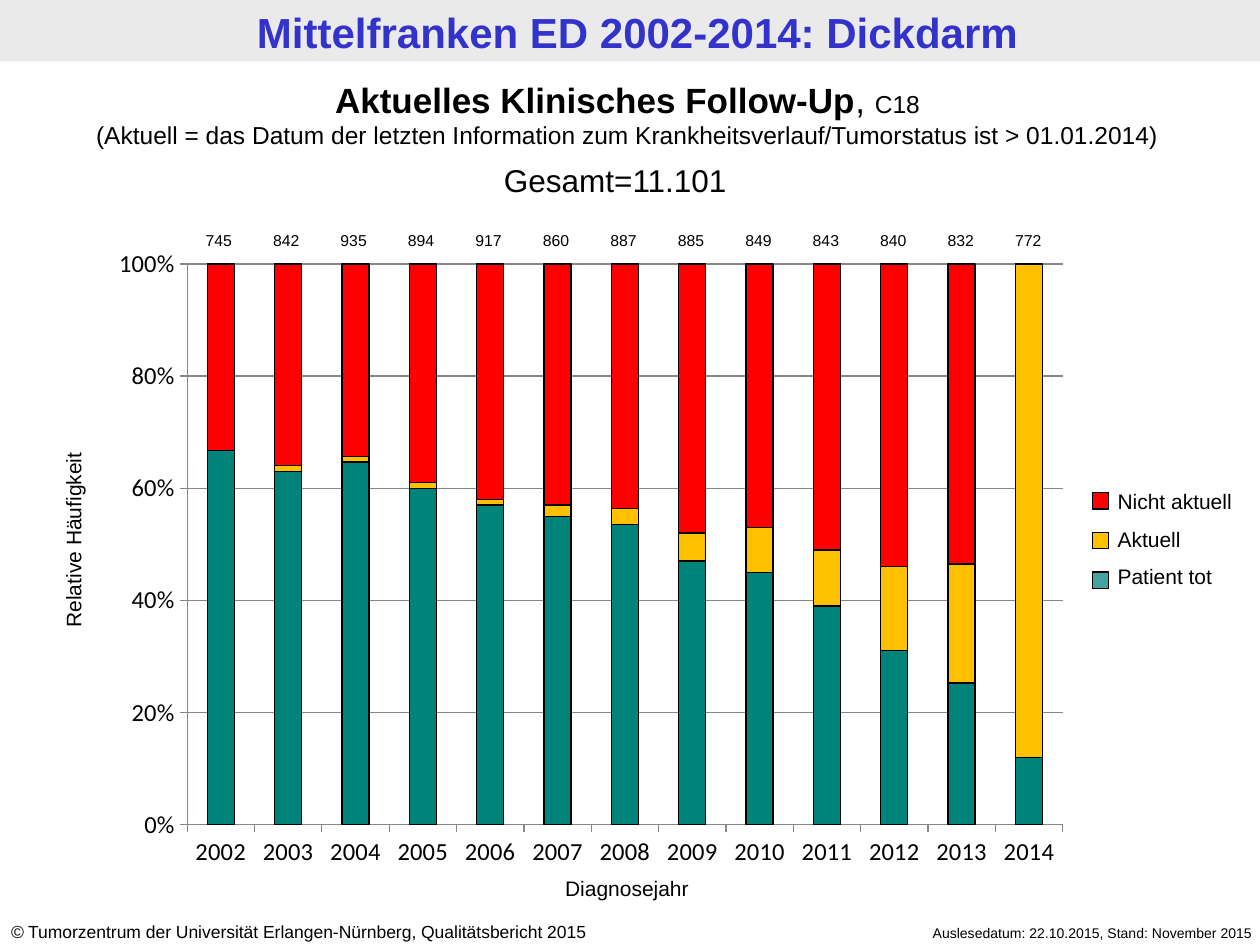
from lxml import etree
from pptx import Presentation
from pptx.chart.data import CategoryChartData
from pptx.dml.color import RGBColor
from pptx.enum.chart import XL_CHART_TYPE, XL_TICK_MARK
from pptx.enum.shapes import MSO_SHAPE
from pptx.enum.text import MSO_ANCHOR, PP_ALIGN
from pptx.oxml import parse_xml
from pptx.oxml.ns import nsdecls, qn
from pptx.util import Cm, Pt

STACKED = XL_CHART_TYPE.COLUMN_STACKED_100
OUTSIDE, NO_TICK = XL_TICK_MARK.OUTSIDE, XL_TICK_MARK.NONE
RECT, TOP = MSO_SHAPE.RECTANGLE, MSO_ANCHOR.TOP
LEFT, CENTER, RIGHT = PP_ALIGN.LEFT, PP_ALIGN.CENTER, PP_ALIGN.RIGHT

BLACK, GRAY = "000000", "878787"
YEARS = [str(year) for year in range(2002, 2015)]
COUNTS = [745, 842, 935, 894, 917, 860, 887, 885, 849, 843, 840, 832, 772]
SERIES = [
    ("Patient tot", "008378", [66, 63, 64, 60, 57, 55, 54, 47, 45, 39, 31, 25, 12]),
    ("Aktuell", "FFC000", [0, 1, 1, 1, 1, 2, 3, 5, 8, 10, 15, 21, 88]),
    ("Nicht aktuell", "FF0000", [33, 36, 34, 39, 42, 43, 44, 48, 47, 51, 54, 53, 0]),
]
LEGEND = [("Nicht aktuell", "FF0000", 100), ("Aktuell", "FFC000", 100),
          ("Patient tot", "008380", 74)]


def rgb(value):
    """Return the colour of a hex string."""
    return RGBColor.from_string(value)


def cm(*lengths):
    """Return the lengths in centimetres."""
    return [Cm(length) for length in lengths]


def add_run(p, text, size, color=BLACK, bold=False, italic=False):
    """Add one Arial run to a paragraph."""
    r = p.add_run()
    r.text = text
    r.font.name, r.font.size = "Arial", Pt(size)
    r.font.bold, r.font.italic = bold, italic
    r.font.color.rgb = rgb(color)


def add_text(s, box, paragraphs, align=LEFT, gap=0, rotation=0):
    """Add a text box whose paragraphs are lists of run arguments."""
    sp = s.shapes.add_textbox(*cm(*box))
    sp.rotation = rotation
    tf = sp.text_frame
    tf.word_wrap = True
    for i, runs in enumerate(paragraphs):
        p = tf.add_paragraph() if i else tf.paragraphs[0]
        p.alignment = align
        if i and gap:
            p.space_before = Pt(gap)
        for run in runs:
            add_run(p, *run)


def add_rect(s, box, fill, outline=None, opacity=100):
    """Add a filled rectangle with an optional thin outline."""
    sp = s.shapes.add_shape(RECT, *cm(*box))
    sp.shadow.inherit = False
    sp.fill.solid()
    sp.fill.fore_color.rgb = rgb(fill)
    if outline:
        sp.line.color.rgb = rgb(outline)
        sp.line.width = Pt(0.75)
    else:
        sp.line.fill.background()
    if opacity < 100:
        color = sp.element.spPr.find(qn("a:solidFill"))[0]
        etree.SubElement(color, qn("a:alpha")).set("val", str(opacity * 1000))
    return sp


def add_title(s, text):
    """Fill the title placeholder and put the gray band behind it."""
    sp = s.shapes.title
    sp.left, sp.top, sp.width, sp.height = cm(0.15, 0.03, 25.4, 1.24)
    tf = sp.text_frame
    tf.vertical_anchor = TOP
    tf.margin_left = tf.margin_right = Cm(0.23)
    tf.margin_top = tf.margin_bottom = Cm(0.1)
    p = tf.paragraphs[0]
    p.alignment = CENTER
    add_run(p, text, 24, "3333CC", True)
    band = add_rect(s, (0, 0, 25.4, 1.24), "EAEAEA")
    sp.element.addprevious(band.element)


def style_axis(axis):
    """Give an axis its line, ticks and label size."""
    axis.format.line.color.rgb = rgb(GRAY)
    axis.major_tick_mark, axis.minor_tick_mark = OUTSIDE, NO_TICK
    axis.tick_labels.font.size = Pt(14)


def set_plot_area(chart, x, y, w, h):
    """Fix the inner plot area as fractions of the chart."""
    area = chart.element.chart.plotArea
    for old in area.findall(qn("c:layout")):
        area.remove(old)
    sizes = "".join(f'<c:{tag} val="{val}"/>' for tag, val in zip("xywh", (x, y, w, h)))
    area.insert(0, parse_xml(
        f'<c:layout {nsdecls("c")}><c:manualLayout><c:layoutTarget val="inner"/>'
        f'<c:xMode val="edge"/><c:yMode val="edge"/>{sizes}'
        "</c:manualLayout></c:layout>"))


def add_follow_up_chart(s, box):
    """Add the stacked columns of follow-up status by year."""
    data = CategoryChartData()
    data.categories = YEARS
    for name, _, values in SERIES:
        data.add_series(name, values)
    chart = s.shapes.add_chart(STACKED, *cm(*box), data).chart
    chart.has_legend = chart.has_title = False
    chart.font.name, chart.font.size = "Calibri", Pt(18)
    chart.font.color.rgb = rgb(BLACK)
    plot = chart.plots[0]
    plot.gap_width, plot.overlap, plot.vary_by_categories = 150, 100, False
    for series, (_, color, _) in zip(plot.series, SERIES):
        series.format.fill.solid()
        series.format.fill.fore_color.rgb = rgb(color)
        series.format.line.color.rgb = rgb(BLACK)
        series.format.line.width = Pt(0.75)
    style_axis(chart.category_axis)
    axis = chart.value_axis
    style_axis(axis)
    axis.minimum_scale, axis.maximum_scale, axis.major_unit = 0, 1, 0.2
    axis.tick_labels.number_format = "0%"
    axis.tick_labels.number_format_is_linked = False
    axis.has_major_gridlines = True
    axis.major_gridlines.format.line.color.rgb = rgb(GRAY)
    set_plot_area(chart, 0.089, 0.044, 0.891, 0.871)


def add_legend(s):
    """Add the legend labels and their colour keys."""
    add_text(s, (22.28, 9.73, 3.61, 2.31), [[(name, 12)] for name, _, _ in LEGEND], gap=7)
    for i, (_, color, opacity) in enumerate(LEGEND):
        add_rect(s, (22.02, 9.93 + 0.8 * i, 0.33, 0.33), color, BLACK, opacity)


def main():
    """Build the slide and save it."""
    prs = Presentation()
    prs.slide_width, prs.slide_height = cm(25.4, 19.05)
    s = prs.slides.add_slide(prs.slide_layouts[5])
    add_title(s, "Mittelfranken ED 2002-2014: Dickdarm")
    add_text(s, (16.89, 18.52, 8.61, 0.61),
             [[("Auslesedatum: 22.10.2015, Stand: November 2015", 8)]], RIGHT)
    add_text(s, (-0.03, 18.44, 13.31, 0.69), [[
        ("©", 10, BLACK, False, True),
        (" Tumorzentrum der Universität Erlangen-Nürnberg, Qualitätsbericht 2015", 10)]])
    add_follow_up_chart(s, (2.01, 4.75, 19.81, 12.98))
    add_text(s, (-1.57, 10.49, 6.12, 0.79), [[("Relative Häufigkeit", 12)]], CENTER,
             rotation=270)
    add_text(s, (9.78, 17.53, 5.72, 0.79), [[("Diagnosejahr", 12)]], CENTER)
    for i, count in enumerate(COUNTS):
        add_text(s, (3.71 + 1.36 * i, 4.53, 1.4, 0.64), [[(str(count), 9)]], CENTER)
    add_text(s, (-0.1, 1.45, 25.5, 1.7), [
        [("Aktuelles Klinisches Follow-Up", 20, BLACK, True), (", ", 20), ("C18", 14)],
        [("(Aktuell = das Datum der letzten Information zum "
          "Krankheitsverlauf/Tumorstatus ist > 01.01.2014)", 14)]], CENTER)
    add_text(s, (9.91, 3.12, 5.59, 1.02), [[("Gesamt=11.101", 18)]])
    add_legend(s)
    prs.save("out.pptx")


if __name__ == "__main__":
    main()
